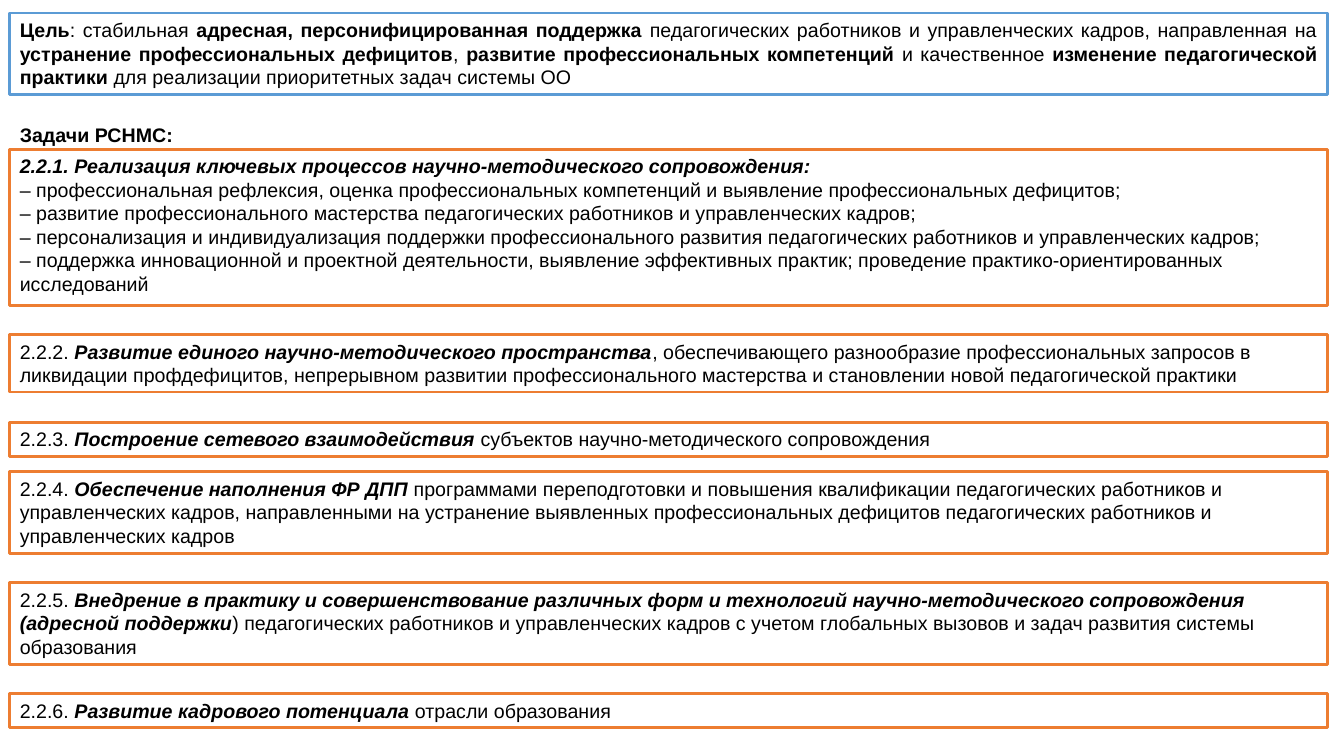
from dataclasses import dataclass

from pptx import Presentation
from pptx.dml.color import RGBColor
from pptx.enum.shapes import MSO_SHAPE
from pptx.enum.text import MSO_ANCHOR, MSO_AUTO_SIZE, PP_ALIGN
from pptx.shapes.autoshape import Shape
from pptx.slide import Slide
from pptx.util import Cm, Pt

BLUE, ORANGE = "5B9BD5", "ED7D31"
BLACK, WHITE = "000000", "FFFFFF"
LEFT, BOX_WIDTH = 0.25, 33.2


@dataclass(frozen=True)
class Run:
    text: str
    bold: bool = False
    italic: bool = False


@dataclass(frozen=True)
class Box:
    """A framed text block; lengths are in centimetres."""
    top: float
    height: float
    paragraphs: list[list[Run]]
    line: str = ORANGE
    alignment: PP_ALIGN = PP_ALIGN.LEFT


def task(number: str, key: str, rest: str) -> list[list[Run]]:
    """One paragraph: plain number, bold italic key phrase, plain ending."""
    return [[Run(f"{number} "), Run(key, bold=True, italic=True), Run(rest)]]


GOAL = [[
    Run("Цель", bold=True),
    Run(": стабильная "),
    Run("адресная, персонифицированная поддержка ", bold=True),
    Run("педагогических работников и управленческих кадров, направленная на "),
    Run("устранение профессиональных дефицитов", bold=True),
    Run(", "),
    Run("развитие профессиональных компетенций ", bold=True),
    Run("и качественное "),
    Run("изменение педагогической практики ", bold=True),
    Run("для реализации приоритетных задач системы ОО"),
]]

KEY_PROCESSES = [
    [Run("2.2.1. Реализация ключевых процессов научно-методического сопровождения:",
         bold=True, italic=True)],
    [Run("– профессиональная рефлексия, оценка профессиональных компетенций "
         "и выявление профессиональных дефицитов;")],
    [Run("– развитие профессионального мастерства педагогических работников "
         "и управленческих кадров;")],
    [Run("– персонализация и индивидуализация поддержки профессионального развития "
         "педагогических работников и управленческих кадров;")],
    [Run("– поддержка инновационной и проектной деятельности, выявление эффективных "
         "практик; проведение практико-ориентированных исследований")],
]

BOXES = [
    Box(0.33, 2.06, GOAL, BLUE, PP_ALIGN.JUSTIFY),
    Box(3.76, 3.94, KEY_PROCESSES),
    Box(8.43, 1.45, task(
        "2.2.2.", "Развитие единого научно-методического пространства",
        ", обеспечивающего разнообразие профессиональных запросов в ликвидации "
        "профдефицитов, непрерывном развитии профессионального мастерства "
        "и становлении новой педагогической практики")),
    Box(10.64, 0.86, task(
        "2.2.3.", "Построение сетевого взаимодействия ",
        "субъектов научно-методического сопровождения")),
    Box(11.89, 2.06, task(
        "2.2.4.", "Обеспечение наполнения ФР ДПП ",
        "программами переподготовки и повышения квалификации педагогических "
        "работников и управленческих кадров, направленными на устранение выявленных "
        "профессиональных дефицитов педагогических работников и управленческих кадров")),
    Box(14.68, 2.06, task(
        "2.2.5.",
        "Внедрение в практику и совершенствование различных форм и технологий "
        "научно-методического сопровождения (адресной поддержки",
        ") педагогических работников и управленческих кадров с учетом глобальных "
        "вызовов и задач развития системы образования")),
    Box(17.48, 0.86, task(
        "2.2.6.", "Развитие кадрового потенциала ", "отрасли образования")),
]


def color(value: str) -> RGBColor:
    return RGBColor.from_string(value)


def write_text(shape: Shape, paragraphs: list[list[Run]],
               alignment: PP_ALIGN = PP_ALIGN.LEFT, wrap: bool = True) -> None:
    frame = shape.text_frame
    frame.word_wrap = wrap
    frame.auto_size = MSO_AUTO_SIZE.SHAPE_TO_FIT_TEXT
    frame.vertical_anchor = MSO_ANCHOR.TOP
    for index, runs in enumerate(paragraphs):
        paragraph = frame.add_paragraph() if index else frame.paragraphs[0]
        paragraph.alignment = alignment
        for item in runs:
            run = paragraph.add_run()
            run.text = item.text
            run.font.name = "Arial"
            run.font.size = Pt(14)
            run.font.bold = item.bold
            run.font.italic = item.italic
            run.font.color.rgb = color(BLACK)


def draw_box(slide: Slide, box: Box) -> None:
    shape = slide.shapes.add_shape(
        MSO_SHAPE.RECTANGLE, Cm(LEFT), Cm(box.top), Cm(BOX_WIDTH), Cm(box.height))
    shape.shadow.inherit = False
    shape.fill.solid()
    shape.fill.fore_color.rgb = color(WHITE)
    shape.line.color.rgb = color(box.line)
    shape.line.width = Pt(2)
    write_text(shape, box.paragraphs, box.alignment)


def main() -> None:
    presentation = Presentation()
    presentation.slide_width = Cm(33.87)
    presentation.slide_height = Cm(19.05)
    slide = presentation.slides.add_slide(presentation.slide_layouts[6])

    heading = slide.shapes.add_textbox(Cm(LEFT), Cm(2.97), Cm(4.8), Cm(1.02))
    write_text(heading, [[Run("Задачи РСНМС:", bold=True)]], wrap=False)
    for box in BOXES:
        draw_box(slide, box)

    presentation.save("out.pptx")


if __name__ == "__main__":
    main()
